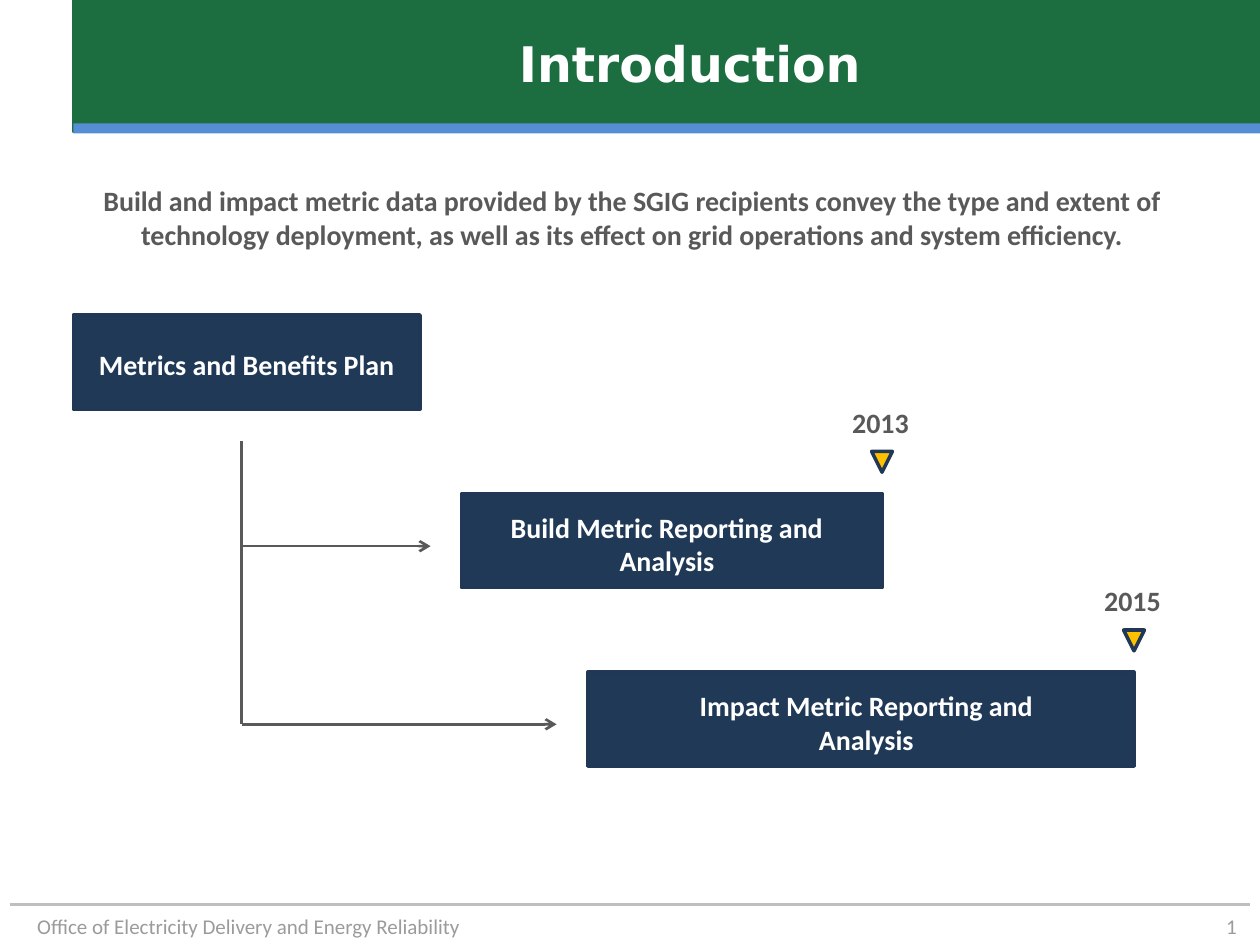
from dataclasses import dataclass

from lxml import etree
from pptx import Presentation
from pptx.dml.color import RGBColor
from pptx.enum.shapes import MSO_CONNECTOR, MSO_SHAPE
from pptx.enum.text import MSO_ANCHOR, PP_ALIGN
from pptx.oxml.ns import qn
from pptx.util import Cm, Pt

RECT = MSO_SHAPE.RECTANGLE
TRIANGLE = MSO_SHAPE.ISOSCELES_TRIANGLE
STRAIGHT = MSO_CONNECTOR.STRAIGHT
LEFT, CENTER, RIGHT = PP_ALIGN.LEFT, PP_ALIGN.CENTER, PP_ALIGN.RIGHT
TOP, MIDDLE = MSO_ANCHOR.TOP, MSO_ANCHOR.MIDDLE


@dataclass(frozen=True)
class Theme:
    green: str = "1C6E41"
    blue: str = "558ED5"
    navy: str = "203957"
    edge: str = "203856"
    gold: str = "FFC000"
    white: str = "FFFFFF"
    gray: str = "595959"
    pale: str = "9B9B9B"
    rule: str = "BFBFBF"
    head: str = "DejaVu Sans"
    body: str = "Calibri"
    title: int = 28
    text: int = 16
    small: int = 12


THEME = Theme()


def color(code):
    return RGBColor.from_string(code)


def add_block(shapes, kind, box, fill, line=None, width=2):
    block = shapes.add_shape(kind, *map(Cm, box))
    block.shadow.inherit = False
    block.fill.solid()
    block.fill.fore_color.rgb = color(fill)
    if line:
        block.line.color.rgb = color(line)
        block.line.width = Pt(width)
    else:
        block.line.fill.background()
    return block


def add_text(shapes, box, text, tint, align=CENTER, size=THEME.text,
             bold=True, face=THEME.body, anchor=TOP, inset=0.13):
    frame = shapes.add_textbox(*map(Cm, box)).text_frame
    frame.word_wrap = True
    frame.vertical_anchor = anchor
    frame.margin_top = frame.margin_bottom = Cm(inset)
    para = frame.paragraphs[0]
    para.alignment = align
    run = para.add_run()
    run.text = text
    run.font.name = face
    run.font.size = Pt(size)
    run.font.bold = bold
    run.font.color.rgb = color(tint)


def add_line(shapes, start, end, tint=THEME.gray, width=1.5, arrow=False):
    line = shapes.add_connector(STRAIGHT, *map(Cm, start + end))
    line.line.color.rgb = color(tint)
    line.line.width = Pt(width)
    if arrow:
        tail = etree.SubElement(line.line._get_or_add_ln(), qn("a:tailEnd"))
        tail.set("type", "arrow")
    etree.SubElement(line._element.spPr, qn("a:effectLst"))


def add_frame(shapes):
    add_block(shapes, RECT, (1.48, 0, 23.92, 2.67), THEME.green, THEME.green, 1)
    add_block(shapes, RECT, (1.48, 2.49, 23.92, 0.2), THEME.blue)
    add_text(shapes, (2.75, 0, 22.65, 2.54), "Introduction ", THEME.white,
             size=THEME.title, face=THEME.head, anchor=MIDDLE)
    add_line(shapes, (0.2, 18.24), (25.2, 18.24), THEME.rule, 1.75)
    add_text(shapes, (0, 18.29, 9.53, 0.76),
             "Office of Electricity Delivery and Energy Reliability",
             THEME.pale, RIGHT, THEME.small, False)
    add_text(shapes, (19.25, 18.29, 5.93, 0.76), "1", THEME.pale, RIGHT,
             THEME.small, False, anchor=MIDDLE)


def add_step(shapes, box, label, text):
    add_block(shapes, RECT, box, THEME.navy, THEME.edge)
    add_text(shapes, label, text, THEME.white)


def add_date(shapes, mid, top, year):
    group = shapes.add_group_shape().shapes
    mark = add_block(group, TRIANGLE, (mid - 0.21, top + 1.06, 0.42, 0.42),
                     THEME.gold, THEME.edge)
    mark.rotation = 180
    add_text(group, (mid - 0.85, top, 1.7, 0.94), year, THEME.gray, LEFT)


def main():
    deck = Presentation()
    deck.slide_width, deck.slide_height = Cm(25.4), Cm(19.05)
    shapes = deck.slides.add_slide(deck.slide_layouts[6]).shapes

    add_frame(shapes)
    add_text(shapes, (1.22, 3.45, 23.06, 1.78),
             "Build and impact metric data provided by the SGIG recipients "
             "convey the type and extent of technology deployment, as well as "
             "its effect on grid operations and system efficiency.",
             THEME.gray, inset=0.25)

    steps = (
        ((1.48, 6.35, 6.99, 1.9), (1.7, 6.88, 6.55, 0.94),
         "Metrics and Benefits Plan "),
        ((9.31, 9.95, 8.47, 1.9), (9.53, 10.16, 7.83, 1.7),
         "Build Metric Reporting and Analysis"),
        ((11.85, 13.55, 11.01, 1.9), (13.55, 13.76, 7.83, 1.7),
         "Impact Metric Reporting and Analysis"),
    )
    for step in steps:
        add_step(shapes, *step)

    stem = 4.87
    add_line(shapes, (stem, 8.89), (stem, 14.6))
    for end, y in ((8.68, 11.01), (11.22, 14.6)):
        add_line(shapes, (stem, y), (end, y), arrow=True)
    for mid, top, year in ((17.78, 8.04, "2013"), (22.86, 11.64, "2015")):
        add_date(shapes, mid, top, year)

    deck.save("out.pptx")


if __name__ == "__main__":
    main()
